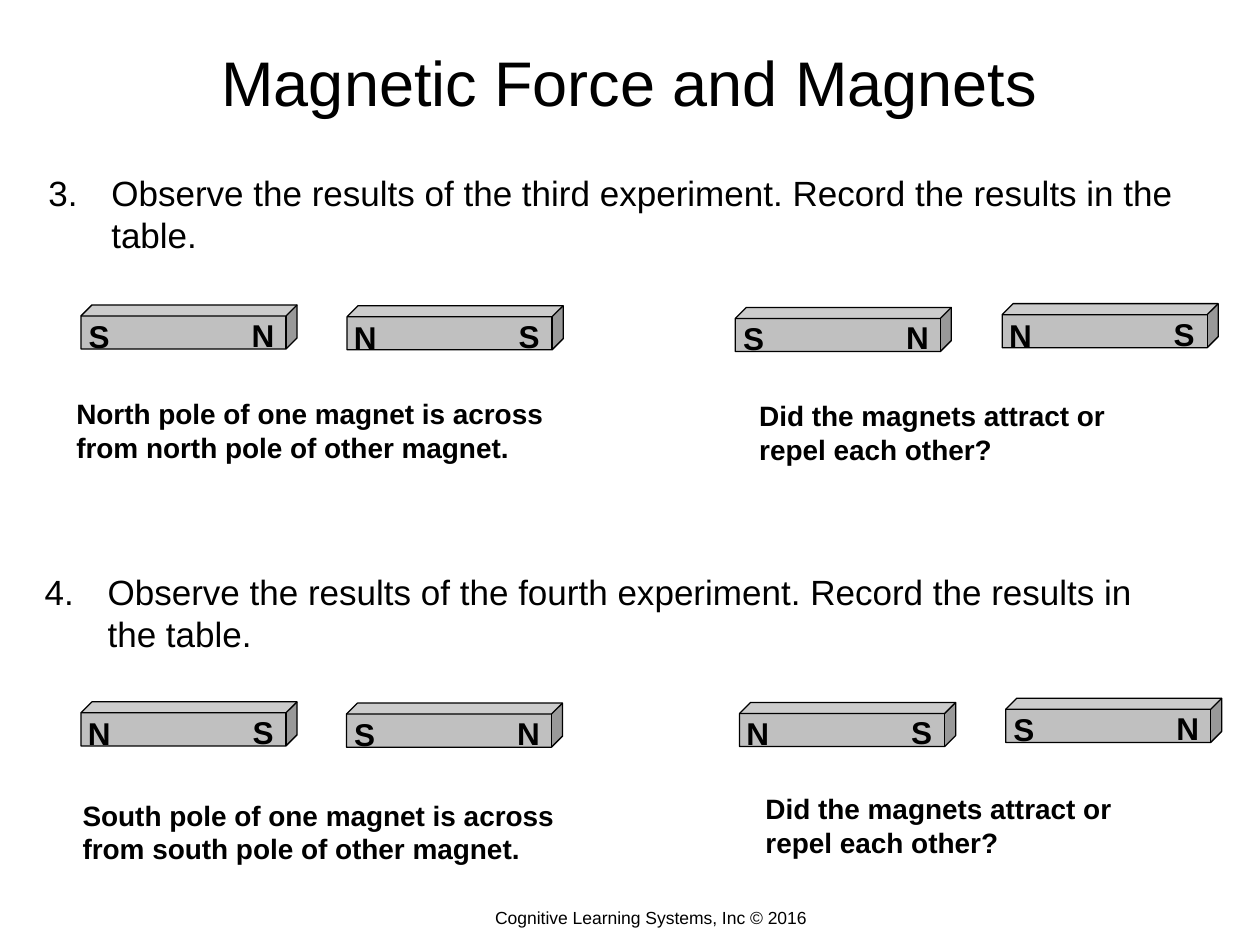
from pptx import Presentation, util as u
from pptx.dml.color import RGBColor
from pptx.enum import text
from pptx.oxml.ns import qn
from lxml import etree

COLORS = {"ink": "000000", "steel": "C0C0C0", "page": "FFFFFF"}
FONT = "Arial"
COLUMNS, ROWS = 100, 75
MAGNET_WIDTH, MAGNET_HEIGHT = 17.15, 3.5
DEPTH = MAGNET_HEIGHT / 4
POLE_SIZE = (4.7, 3.8)
POLE_OFFSETS = ((-0.9, 0.45), (12.1, 0.37))
QUESTION = "Did the magnets attract or repel each other?"

EXPERIMENTS = [
    {
        "number": 3,
        "step": ("Observe the results of the third experiment. "
                 "Record the results in the table.", (3.34, 13.1, 91.7, 7.3)),
        "notes": [
            ("North pole of one magnet is across from north pole of other magnet.",
             (5.56, 31, 39.7, 5.9)),
            (QUESTION, (59.75, 31.15, 30.8, 5.9)),
        ],
        "magnets": [("SN", 6.43, 24.2), ("NS", 27.55, 24.26),
                    ("SN", 58.36, 24.4), ("NS", 79.54, 24.1)],
    },
    {
        "number": 4,
        "step": ("Observe the results of the fourth experiment. "
                 "Record the results in the table.", (3.04, 44.8, 89.2, 7.3)),
        "notes": [
            ("South pole of one magnet is across from south pole of other magnet.",
             (6.06, 62.87, 42, 5.9)),
            (QUESTION, (60.25, 62.36, 31.2, 5.9)),
        ],
        "magnets": [("NS", 6.43, 55.7), ("SN", 27.5, 55.8),
                    ("NS", 58.7, 55.75), ("SN", 79.82, 55.42)],
    },
]


def color(name):
    return RGBColor.from_string(COLORS[name])


def write(box, words, size, bold=False, align=text.PP_ALIGN.LEFT, number=None,
          anchor=text.MSO_ANCHOR.TOP, wrap=True):
    """Fill a box with one paragraph; number makes it a numbered list item."""
    frame = box.text_frame
    frame.word_wrap = wrap
    frame.auto_size = text.MSO_AUTO_SIZE.NONE
    frame.vertical_anchor = anchor
    frame.margin_left = frame.margin_right = u.Inches(0.05)
    frame.margin_top = frame.margin_bottom = u.Inches(0.05)
    para = frame.paragraphs[0]
    para.alignment = align
    para.space_before = u.Pt(0)
    if number is not None:
        props = para._p.get_or_add_pPr()
        indent = u.Inches(0.5)
        props.set("marL", str(indent))
        props.set("indent", str(-indent))
        etree.SubElement(props, qn("a:buAutoNum"), type="arabicPeriod",
                         startAt=str(number))
    span = para.add_run()
    span.text = words
    span.font.name = FONT
    span.font.size = u.Pt(size)
    span.font.bold = bold
    span.font.color.rgb = color("ink")


class Sheet:
    def __init__(self, deck):
        self.deck = deck
        self.page = deck.slides.add_slide(deck.slide_layouts[5])
        self.page.background.fill.solid()
        self.page.background.fill.fore_color.rgb = color("page")

    def area(self, *grid):
        """Turn alternating grid columns and rows into slide lengths."""
        steps = (self.deck.slide_width / COLUMNS, self.deck.slide_height / ROWS)
        return tuple(round(value * steps[i % 2]) for i, value in enumerate(grid))

    def title(self, words, grid):
        box = self.page.shapes.title
        box.left, box.top, box.width, box.height = self.area(*grid)
        write(box, words, 36, align=text.PP_ALIGN.CENTER)

    def label(self, words, grid, size, parent=None, **style):
        owner = parent or self.page
        write(owner.shapes.add_textbox(*self.area(*grid)), words, size, **style)

    def outline(self, parent, closed, strokes=(), fill=None, opacity=None):
        """Draw a closed contour: filled, or as a line with extra strokes."""
        builder = parent.shapes.build_freeform(*self.area(*closed[0]))
        builder.add_line_segments([self.area(*point) for point in closed[1:]])
        for stroke in strokes:
            builder.move_to(*self.area(*stroke[0]))
            builder.add_line_segments([self.area(*point) for point in stroke[1:]],
                                      close=False)
        shape = builder.convert_to_shape()
        shape.shadow.inherit = False
        if fill is None:
            shape.fill.background()
            shape.line.color.rgb = color("ink")
            shape.line.width = u.Pt(0.75)
            return
        shape.line.fill.background()
        shape.fill.solid()
        shape.fill.fore_color.rgb = color(fill)
        if opacity is not None:
            tint = shape._element.spPr.find(qn("a:solidFill"))[0]
            etree.SubElement(tint, qn("a:alpha"), val=str(opacity * 1000))

    def magnet(self, poles, left, top):
        group = self.page.shapes.add_group_shape()
        right, bottom = left + MAGNET_WIDTH, top + MAGNET_HEIGHT
        front_left, front_right = (left, top + DEPTH), (right - DEPTH, top + DEPTH)
        back_left, back_right = (left + DEPTH, top), (right, top)
        low_back, low_right = (right, bottom - DEPTH), (right - DEPTH, bottom)
        body = [front_left, back_left, back_right, low_back, low_right, (left, bottom)]
        self.outline(group, body, fill="steel")
        self.outline(group, [front_right, back_right, low_back, low_right],
                     fill="ink", opacity=20)
        self.outline(group, [front_left, back_left, back_right, front_right],
                     fill="page", opacity=20)
        self.outline(group, body, strokes=[[front_left, front_right, back_right],
                                           [front_right, low_right]])
        for pole, (across, down) in zip(poles, POLE_OFFSETS):
            self.label(pole, (left + across, top + down, *POLE_SIZE), 18,
                       parent=group, bold=True, align=text.PP_ALIGN.CENTER)


def main():
    deck = Presentation()
    deck.slide_width, deck.slide_height = u.Inches(10), u.Inches(7.5)
    sheet = Sheet(deck)
    sheet.title("Magnetic Force and Magnets", (-0.54, 2.95, 101, 6.7))
    for experiment in EXPERIMENTS:
        sheet.label(*experiment["step"], 20, number=experiment["number"])
        for words, grid in experiment["notes"]:
            sheet.label(words, grid, 16, bold=True)
        for magnet in experiment["magnets"]:
            sheet.magnet(*magnet)
    sheet.label("Cognitive Learning Systems, Inc © 2016", (38.7, 71.6, 25.9, 2.5), 10,
                align=text.PP_ALIGN.CENTER, anchor=text.MSO_ANCHOR.MIDDLE, wrap=False)
    deck.save("out.pptx")


if __name__ == "__main__":
    main()
